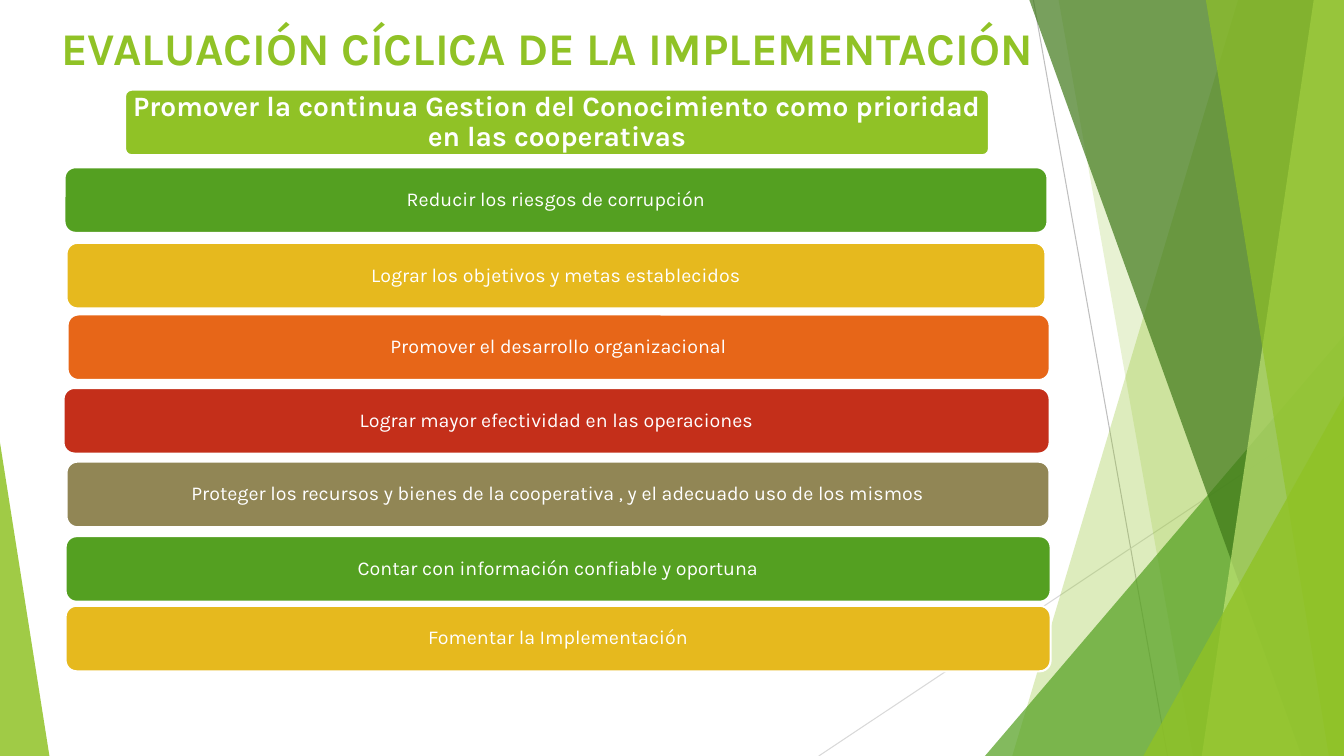
from pptx import Presentation, util as u
from pptx.dml.color import RGBColor
from pptx.enum import shapes, text
from pptx.oxml.ns import qn
from lxml import etree

LIME = RGBColor(0x90, 0xC2, 0x26)
PALE = RGBColor(0xC0, 0xE4, 0x74)
GREEN = RGBColor(0x54, 0xA0, 0x21)
FOREST = RGBColor(0x3F, 0x78, 0x19)
GOLD = RGBColor(0xE6, 0xB9, 0x1E)
ORANGE = RGBColor(0xE7, 0x66, 0x18)
RED = RGBColor(0xC4, 0x2F, 0x1A)
OLIVE = RGBColor(0x91, 0x86, 0x55)
WHITE = RGBColor(0xFF, 0xFF, 0xFF)
GREY = RGBColor(0xBF, 0xBF, 0xBF)
LIGHT_GREY = RGBColor(0xD9, 0xD9, 0xD9)
FONT = "Karla"

deck = Presentation()
deck.slide_width, deck.slide_height = u.Inches(13.33), u.Inches(7.5)
page = deck.slides.add_slide(deck.slide_layouts[6])

# Grid of 100 columns by 100 rows
COL, ROW = deck.slide_width / 100, deck.slide_height / 100


def grid(*cells):
    """Turn alternating columns and rows into slide lengths."""
    return [round(cell * (ROW if i % 2 else COL)) for i, cell in enumerate(cells)]


def write(box, words, size, color, bold=False):
    """Put one styled run in the first paragraph of a shape."""
    box.text_frame.word_wrap = True
    para = box.text_frame.paragraphs[0]
    span = para.add_run()
    span.text = words
    span.font.name, span.font.size, span.font.bold = FONT, u.Pt(size), bold
    span.font.color.rgb = color
    return para


# Thin background lines
for ends, color in [((76.89, 0, 86.87, 100), GREY),
                    ((100, 53.73, 60.92, 100), LIGHT_GREY)]:
    line = page.shapes.add_connector(shapes.MSO_CONNECTOR.STRAIGHT, *grid(*ends))
    line.line.color.rgb, line.line.width = color, u.Pt(0.75)
    etree.SubElement(line._element.spPr, qn("a:effectLst"))

# Translucent facets: bands reach the right edge, triangles stand on the bottom
# band: top-left column, bottom-left column
# triangle: left column, right column, top row, apex share
facets = [
    ("band", (92.12, 75.32), LIME, 30),
    ("band", (78.77, 88.75), LIME, 20),
    ("triangle", (73.29, 100, 44.4, 1), GREEN, 72),
    ("band", (76.59, 96.85), FOREST, 70),
    ("band", (97.75, 89.42), PALE, 70),
    ("band", (89.72, 98.87), LIME, 65),
    ("triangle", (85.07, 100, 52.4, 1), LIME, 80),
    ("triangle", (0, 3.68, 58.53, 0), LIME, 85),
]
for kind, edges, color, opacity in facets:
    if kind == "band":
        top, bottom = edges
        outline = page.shapes.build_freeform(*grid(top, 0))
        outline.add_line_segments([grid(100, 0), grid(100, 100), grid(bottom, 100)])
        facet = outline.convert_to_shape()
    else:
        left, right, top, apex = edges
        facet = page.shapes.add_shape(shapes.MSO_SHAPE.ISOSCELES_TRIANGLE,
                                      *grid(left, top, right - left, 100 - top))
        facet.adjustments[0] = apex
    facet.shadow.inherit = False
    facet.fill.solid()
    facet.fill.fore_color.rgb = color
    facet.line.fill.background()
    tint = facet._element.spPr.find(qn("a:solidFill"))[0]
    etree.SubElement(tint, qn("a:alpha"), val=str(opacity * 1000))

# Title
title = page.shapes.add_textbox(*grid(3.83, 2, 77.19, 10))
write(title, "EVALUACIÓN CÍCLICA DE LA IMPLEMENTACIÓN", 32.4, LIME, True)

# Heading bar and goal bars: left, top, width, colour, words
BAR_HEIGHT = 8.67
bars = [
    (9.3, 11.87, 64.29, LIME,
     "Promover la continua Gestion del Conocimiento como prioridad en las cooperativas"),
    (4.8, 22.13, 73.14, GREEN, "Reducir los riesgos de corrupción"),
    (4.95, 32.13, 72.84, GOLD, "Lograr los objetivos y metas establecidos"),
    (5.03, 41.6, 73.07, ORANGE, "Promover el desarrollo organizacional"),
    (4.73, 51.33, 73.37, RED, "Lograr mayor efectividad en las operaciones"),
    (4.95, 61.07, 73.14, OLIVE,
     "Proteger los recursos y bienes de la cooperativa , y el adecuado uso de los mismos"),
    (4.88, 70.93, 73.29, GREEN, "Contar con información confiable y oportuna"),
    (4.88, 80.13, 73.29, GOLD, "Fomentar la Implementación"),
]
for i, (left, top, width, color, words) in enumerate(bars):
    heading = i == 0
    bar = page.shapes.add_shape(shapes.MSO_SHAPE.ROUNDED_RECTANGLE,
                                *grid(left, top, width, BAR_HEIGHT))
    bar.adjustments[0] = 0.1 if heading else 0.167
    bar.shadow.inherit = False
    bar.fill.solid()
    bar.fill.fore_color.rgb = color
    bar.line.color.rgb, bar.line.width = WHITE, u.Pt(1.5)
    frame = bar.text_frame
    frame.vertical_anchor = text.MSO_ANCHOR.MIDDLE
    frame.margin_left = frame.margin_right = u.Inches(0.05 if heading else 0.11)
    frame.margin_top = frame.margin_bottom = u.Inches(0.03 if heading else 0.11)
    para = write(bar, words, 20 if heading else 14, WHITE, heading)
    para.alignment = text.PP_ALIGN.CENTER
    para.line_spacing = 0.9

deck.save("out.pptx")
